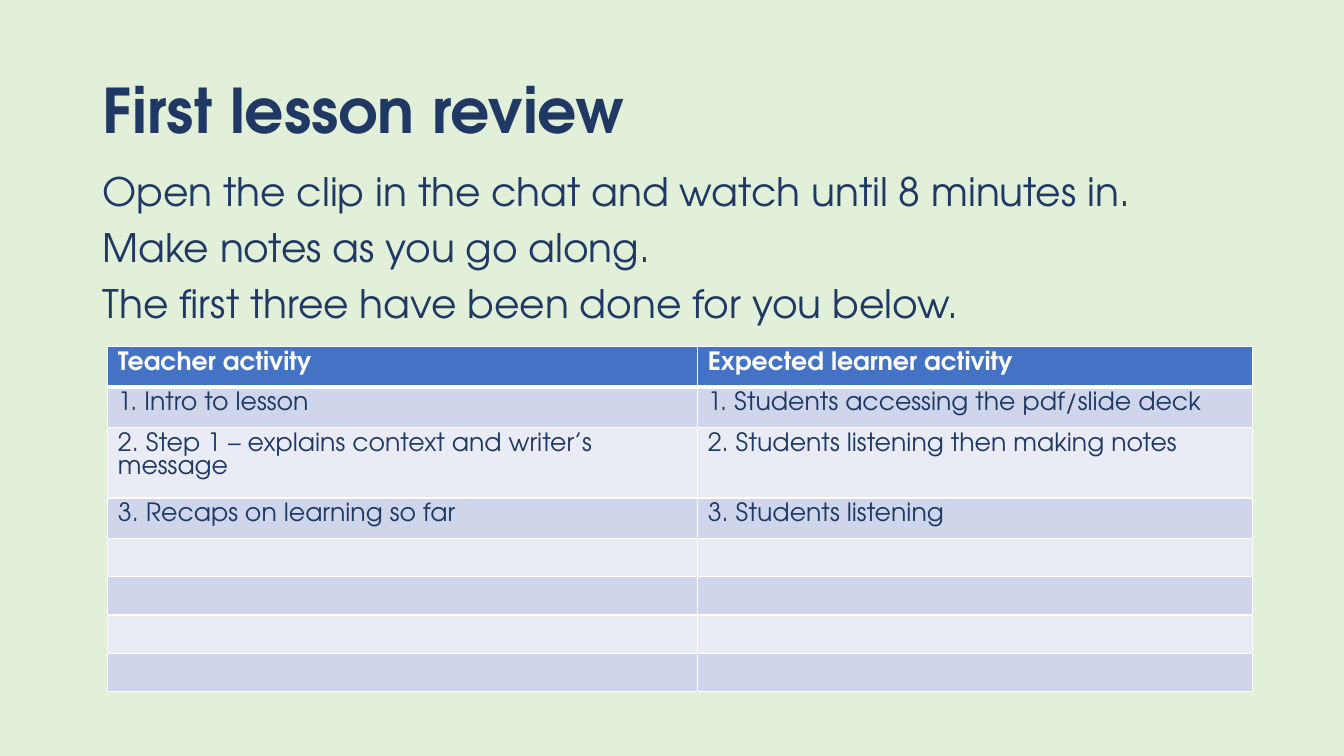
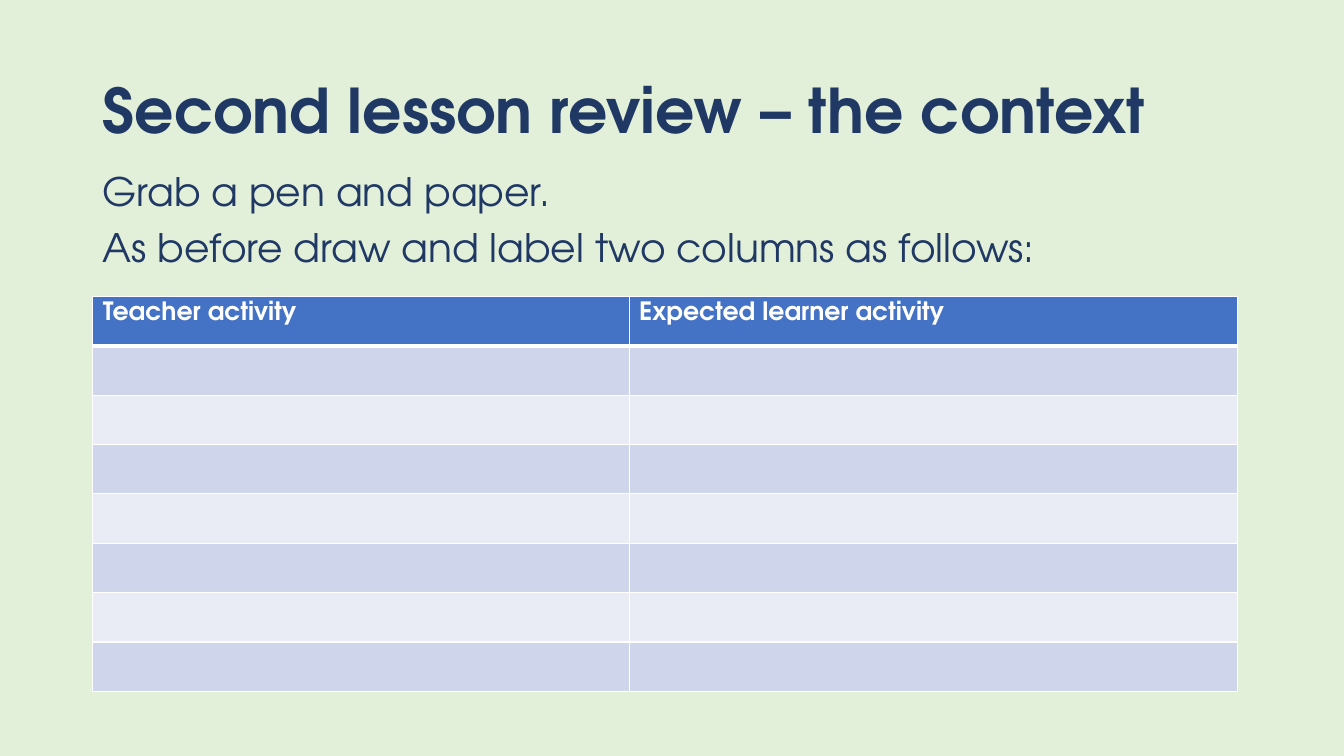
"""Build two lesson review slides, each with instructions and an activity table."""
from dataclasses import dataclass

from lxml.etree import SubElement
from pptx import Presentation
from pptx.dml.color import RGBColor
from pptx.enum.text import MSO_ANCHOR
from pptx.oxml.ns import qn
from pptx.util import Inches, Pt


@dataclass(frozen=True)
class Theme:
    """Colours, font, type sizes and shared measures."""
    page: str = "E2F0D9"
    ink: str = "203864"
    header: str = "4472C4"
    bands: tuple = ("CFD5EA", "E9EBF5")
    white: str = "FFFFFF"
    font: str = "TeX Gyre Adventor"
    title_size: int = 44
    body_size: int = 28
    cell_size: int = 18
    blank_size: int = 12
    left: float = 0.92
    width: float = 11.5
    table_width: float = 11.35
    line_spacing: float = 0.9


THEME = Theme()
COLUMN_HEADS = ("Teacher activity", "Expected learner activity")
TABLE_ROWS = 8


def set_attrs(obj, values):
    """Set each attribute of an object from a dict."""
    for name, value in values.items():
        setattr(obj, name, value)


def add_run(p, text, size, color=THEME.ink, bold=False):
    """Add a styled run to a paragraph."""
    r = p.add_run()
    r.text = text
    set_attrs(r.font, {"name": THEME.font, "size": Pt(size), "bold": bold})
    r.font.color.rgb = RGBColor.from_string(color)


def add_text(s, top, height, lines, size, bold=False,
             anchor=MSO_ANCHOR.TOP, before=0):
    """Add a text box with one paragraph per line."""
    box = s.shapes.add_textbox(*map(Inches, (THEME.left, top, THEME.width, height)))
    tf = box.text_frame
    set_attrs(tf, {"word_wrap": True, "vertical_anchor": anchor})
    for i, line in enumerate(lines):
        p = tf.add_paragraph() if i else tf.paragraphs[0]
        set_attrs(p, {"line_spacing": THEME.line_spacing, "space_before": Pt(before)})
        add_run(p, line, size, bold=bold)


def set_borders(cell, widths):
    """Draw white cell borders, given widths in points by side."""
    tc_pr = cell._tc.get_or_add_tcPr()
    for i, (side, width) in enumerate(widths.items()):
        ln = SubElement(tc_pr, qn(f"a:ln{side}"), w=str(Pt(width)))
        fill = SubElement(ln, qn("a:solidFill"))
        SubElement(fill, qn("a:srgbClr"), val=THEME.white)
        tc_pr.insert(i, ln)


def format_cell(cell, text, row):
    """Fill, border and write one cell according to its row."""
    is_head = row == 0
    fill = THEME.header if is_head else THEME.bands[(row - 1) % 2]
    cell.fill.solid()
    cell.fill.fore_color.rgb = RGBColor.from_string(fill)
    top, bottom = (3 if row == 1 else 1), (3 if is_head else 1)
    set_borders(cell, {"L": 1, "R": 1, "T": top, "B": bottom})
    p = cell.text_frame.paragraphs[0]
    if text:
        add_run(p, text, THEME.cell_size,
                THEME.white if is_head else THEME.ink, is_head)
    else:
        SubElement(p._p, qn("a:endParaRPr"), sz=str(THEME.blank_size * 100))


def add_activity_table(s, left, top, first_col, heights, entries=()):
    """Add the two-column activity table with blank rows after its entries."""
    rows = [COLUMN_HEADS, *entries]
    rows += [("", "")] * (TABLE_ROWS - len(rows))
    frame = s.shapes.add_table(TABLE_ROWS, len(COLUMN_HEADS), *map(
        Inches, (left, top, THEME.table_width, sum(heights))))
    table = frame.table
    for col, width in zip(table.columns, (first_col, THEME.table_width - first_col)):
        col.width = Inches(width)
    for i, (texts, height) in enumerate(zip(rows, heights)):
        table.rows[i].height = Inches(height)
        for j, text in enumerate(texts):
            format_cell(table.cell(i, j), text, i)


def add_review_slide(prs, title, lines, body_height, table):
    """Add a slide with a title, instructions and an activity table."""
    s = prs.slides.add_slide(prs.slide_layouts[6])
    add_text(s, 0.4, 1.45, [title], THEME.title_size, True, MSO_ANCHOR.MIDDLE)
    add_text(s, 1.66, body_height, lines, THEME.body_size, before=10)
    add_activity_table(s, **table)


def main():
    """Build and save the presentation."""
    prs = Presentation()
    set_attrs(prs, {"slide_width": Inches(13.33), "slide_height": Inches(7.5)})
    fill = prs.slide_master.background.fill
    fill.solid()
    fill.fore_color.rgb = RGBColor.from_string(THEME.page)

    add_review_slide(
        prs, "First lesson review",
        ["Open the clip in the chat and watch until 8 minutes in.",
         "Make notes as you go along.",
         "The first three have been done for you below."],
        4.76,
        {"left": 1.07, "top": 3.44, "first_col": 5.85,
         "heights": [0.38] * 2 + [0.66] + [0.38] * 5,
         "entries": [
             ("1. Intro to lesson", "1. Students accessing the pdf/slide deck"),
             ("2. Step 1 – explains context and writer’s message",
              "2. Students listening then making notes"),
             ("3. Recaps on learning so far", "3. Students listening")]})
    add_review_slide(
        prs, "Second lesson review – the context",
        ["Grab a pen and paper.",
         "As before draw and label two columns as follows:"],
        1.97,
        {"left": THEME.left, "top": 2.94, "first_col": 5.32,
         "heights": [0.49] * TABLE_ROWS})
    prs.save("out.pptx")


if __name__ == "__main__":
    main()
